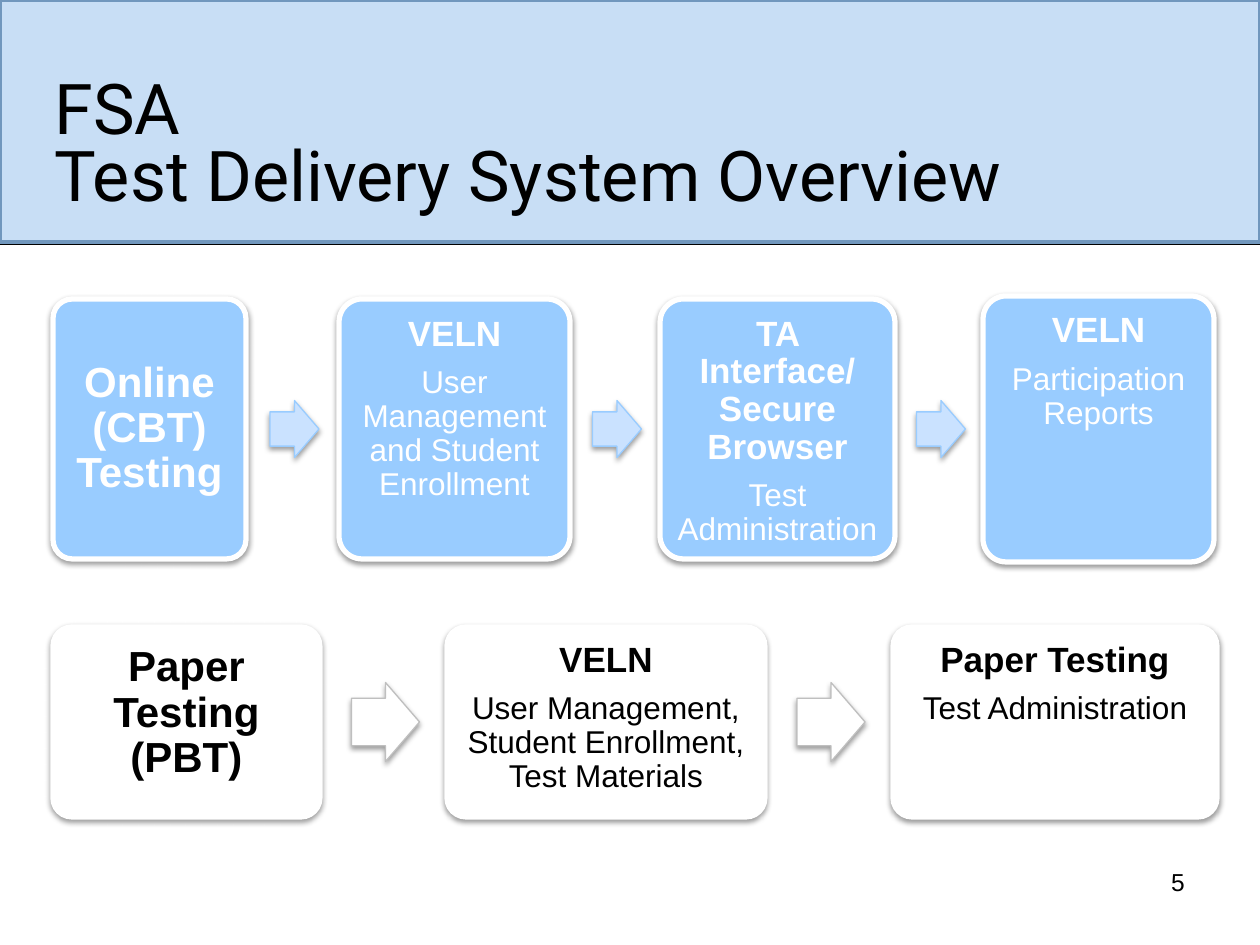
from lxml.etree import SubElement
from pptx import Presentation
from pptx.dml.color import RGBColor
from pptx.enum.shapes import MSO_CONNECTOR as CONNECTOR, MSO_SHAPE as SHAPE
from pptx.enum.text import MSO_ANCHOR as ANCHOR, MSO_AUTO_SIZE as AUTO_SIZE, PP_ALIGN as ALIGN
from pptx.oxml.ns import qn
from pptx.util import Pt

PX = 914400 / 126
COLORS = {
    "black": "000000", "white": "FFFFFF", "band": "C8DEF5", "band_edge": "7197BD",
    "blue": "99CCFF", "pale_blue": "CAE2FF", "grey": "BFBFBF",
}


def px(*lengths):
    return [round(length * PX) for length in lengths]


def color(name):
    return RGBColor.from_string(COLORS[name])


def paint(shape, fill, line, weight):
    shape.shadow.inherit = False
    shape.fill.solid()
    shape.fill.fore_color.rgb = color(fill)
    shape.line.color.rgb = color(line)
    shape.line.width = Pt(weight)


def add_shadow(shape):
    effects = shape._element.spPr.find(qn("a:effectLst"))
    shadow = SubElement(effects, qn("a:outerShdw"), blurRad=str(Pt(3.1)),
                        dist=str(Pt(1.6)), dir="5400000", rotWithShape="0")
    tint = SubElement(shadow, qn("a:srgbClr"), val=COLORS["black"])
    SubElement(tint, qn("a:alpha"), val="38000")


def add_span(para, text, size, ink, bold=False, font="Arial"):
    span = para.add_run()
    span.text = text
    span.font.name = font
    span.font.size = Pt(size)
    span.font.bold = bold
    span.font.color.rgb = color(ink)


def add_header(page, left, top, width, height):
    # Rule and band go behind the title
    tree = page.shapes._spTree
    rule = page.shapes.add_connector(
        CONNECTOR.STRAIGHT, *px(left, top + height, left + width, top + height))
    rule.line.color.rgb = color("black")
    rule.line.width = Pt(4)
    SubElement(rule._element.spPr, qn("a:effectLst"))
    band = page.shapes.add_shape(SHAPE.RECTANGLE, *px(left, top, width, height))
    paint(band, "band", "band_edge", 2)
    tree.insert(2, rule._element)
    tree.insert(3, band._element)

    # Title
    title = page.shapes.title
    title.left, title.top, title.width, title.height = px(left + 42, top + 53, 1176, 190)
    frame = title.text_frame
    frame.auto_size = AUTO_SIZE.NONE
    frame.vertical_anchor = ANCHOR.MIDDLE
    para = frame.paragraphs[0]
    para.alignment = ALIGN.LEFT
    para.line_spacing = 0.8
    add_span(para, "FSA", 40, "black", font="Roboto")
    para.add_line_break()
    add_span(para, "Test Delivery System Overview", 40, "black", font="Roboto")


def add_card(page, left, top, width, height, fill, ink, heading, detail, size, inset, anchor):
    card = page.shapes.add_shape(SHAPE.ROUNDED_RECTANGLE, *px(left, top, width, height))
    card.adjustments[0] = 0.1
    paint(card, fill, "white", 3)
    add_shadow(card)
    frame = card.text_frame
    frame.word_wrap = True
    frame.vertical_anchor = anchor
    (frame.margin_left, frame.margin_top,
     frame.margin_right, frame.margin_bottom) = px(*[inset] * 4)
    para = frame.paragraphs[0]
    add_span(para, heading, size, ink, bold=True)
    if detail:
        para.space_after = Pt(7)
        add_span(frame.add_paragraph(), detail, 18, ink)
    for para in frame.paragraphs:
        para.alignment = ALIGN.CENTER
        para.line_spacing = 0.9


def add_flow(page, left, top, height, cards, arrow_size, look):
    """Cards are (offset, width, rise, heading, detail, size, inset, anchor)."""
    fill, ink, arrow_fill, arrow_line = look
    arrow_width, arrow_height = arrow_size
    for offset, width, rise, *content in cards:
        add_card(page, left + offset, top - rise, width, height + 2 * rise,
                 fill, ink, *content)

    # One arrow in each gap, slightly right of its middle
    for card, following in zip(cards, cards[1:]):
        middle = left + (card[0] + card[1] + following[0]) / 2 + 2
        arrow = page.shapes.add_shape(
            SHAPE.RIGHT_ARROW,
            *px(middle - arrow_width / 2, top + (height - arrow_height) / 2,
                arrow_width, arrow_height))
        arrow.adjustments[0] = 0.6
        arrow.adjustments[1] = 0.5
        paint(arrow, arrow_fill, arrow_line, 0.75)
        add_shadow(arrow)


def add_page_number(page, left, top, width, height):
    box = page.shapes.add_textbox(*px(left, top, width, height))
    box.text_frame.word_wrap = True
    para = box.text_frame.paragraphs[0]
    para.alignment = ALIGN.RIGHT
    add_span(para, "5", 14, "black")


def main():
    deck = Presentation()
    deck.slide_width, deck.slide_height = px(1260, 945)
    page = deck.slides.add_slide(deck.slide_layouts[5])
    add_header(page, 0, 0, 1260, 242)

    online = [
        (0, 193, 0, "Online (CBT) Testing", "", 24, 9, ANCHOR.MIDDLE),
        (286, 231, 0, "VELN", "User Management and Student Enrollment", 20, 10, ANCHOR.TOP),
        (607, 235, 0, "TA Interface/ Secure Browser", "Test Administration",
         20, 10, ANCHOR.TOP),
        (930, 231, 3, "VELN", "Participation Reports", 20, 10, ANCHOR.TOP),
    ]
    add_flow(page, 53, 299, 260, online, (49, 57), ("blue", "white", "pale_blue", "blue"))

    paper = [
        (0, 267, 0, "Paper Testing (PBT)", "", 24, 13, ANCHOR.TOP),
        (394, 318, 0, "VELN", "User Management, Student Enrollment, Test Materials",
         20, 10, ANCHOR.TOP),
        (840, 324, 0, "Paper Testing", "Test Administration", 20, 10, ANCHOR.TOP),
    ]
    add_flow(page, 53, 627, 190, paper, (68, 79), ("white", "black", "white", "grey"))

    add_page_number(page, 903, 861, 294, 66)
    deck.save("out.pptx")


if __name__ == "__main__":
    main()
